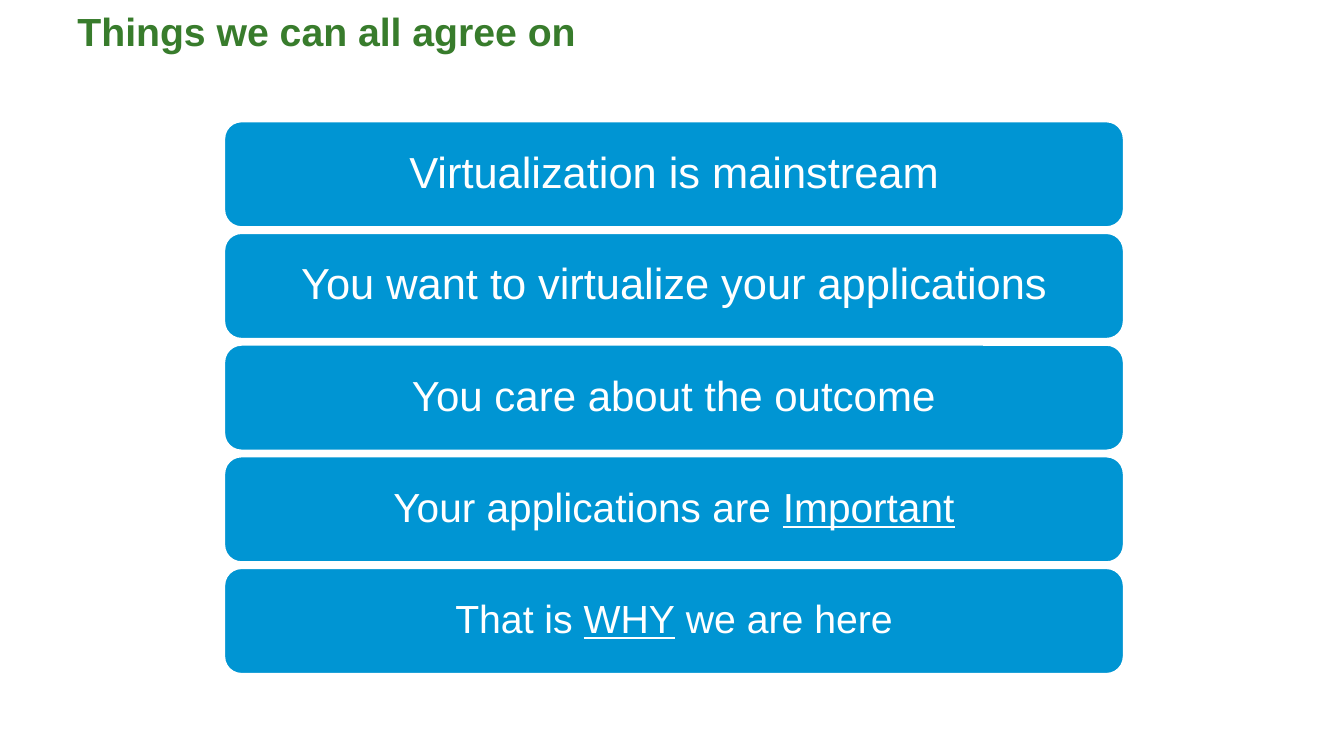
from pptx import Presentation
from pptx.dml.color import RGBColor
from pptx.enum.shapes import MSO_SHAPE
from pptx.enum.text import MSO_ANCHOR, PP_ALIGN
from pptx.util import Inches, Pt

COLORS = {"title": "387C2C", "bar": "0095D3", "white": "FFFFFF"}
FONT = "Arial"

# Each statement: font size and its runs as (text, underlined)
STATEMENTS = [
    (31, [("Virtualization is mainstream", False)]),
    (31, [("You want to virtualize your applications", False)]),
    (30, [("You care about the outcome", False)]),
    (29, [("Your applications are ", False), ("Important", True)]),
    (28, [("That is ", False), ("WHY", True), (" we are here", False)]),
]


def rgb(name):
    return RGBColor.from_string(COLORS[name])


def write(tf, runs, size, color, bold=False, align=PP_ALIGN.LEFT,
          anchor=MSO_ANCHOR.TOP, inset=(0.1, 0.05)):
    tf.word_wrap = True
    tf.vertical_anchor = anchor
    tf.margin_left = tf.margin_right = Inches(inset[0])
    tf.margin_top = tf.margin_bottom = Inches(inset[1])
    p = tf.paragraphs[0]
    p.alignment = align
    p.line_spacing = 0.9
    for text, underline in runs:
        r = p.add_run()
        r.text = text
        r.font.name = FONT
        r.font.size = Pt(size)
        r.font.bold = bold
        r.font.underline = underline
        r.font.color.rgb = rgb(color)


def add_title(s, text, x, y, w, h):
    tb = s.shapes.add_textbox(Inches(x), Inches(y), Inches(w), Inches(h))
    write(tb.text_frame, [(text, False)], 28, "title", bold=True)


def add_statements(s, statements, x, y, w, h, gap=0.05):
    bar_h = (h - gap * (len(statements) - 1)) / len(statements)
    for row, (size, runs) in enumerate(statements):
        top = y + row * (bar_h + gap)
        sp = s.shapes.add_shape(MSO_SHAPE.ROUNDED_RECTANGLE, Inches(x),
                                Inches(top), Inches(w), Inches(bar_h))
        sp.shadow.inherit = False
        sp.fill.solid()
        sp.fill.fore_color.rgb = rgb("bar")
        sp.line.color.rgb = rgb("white")
        sp.line.width = Pt(2)
        write(sp.text_frame, runs, size, "white", align=PP_ALIGN.CENTER,
              anchor=MSO_ANCHOR.MIDDLE, inset=(0.13, 0.06))


def main():
    prs = Presentation()
    prs.slide_width = Inches(13.33)
    prs.slide_height = Inches(7.5)
    s = prs.slides.add_slide(prs.slide_layouts[6])
    add_title(s, "Things we can all agree on", 0.67, 0.08, 11.99, 0.64)
    add_statements(s, STATEMENTS, 2.22, 1.2, 8.93, 5.49)
    prs.save("out.pptx")


if __name__ == "__main__":
    main()
